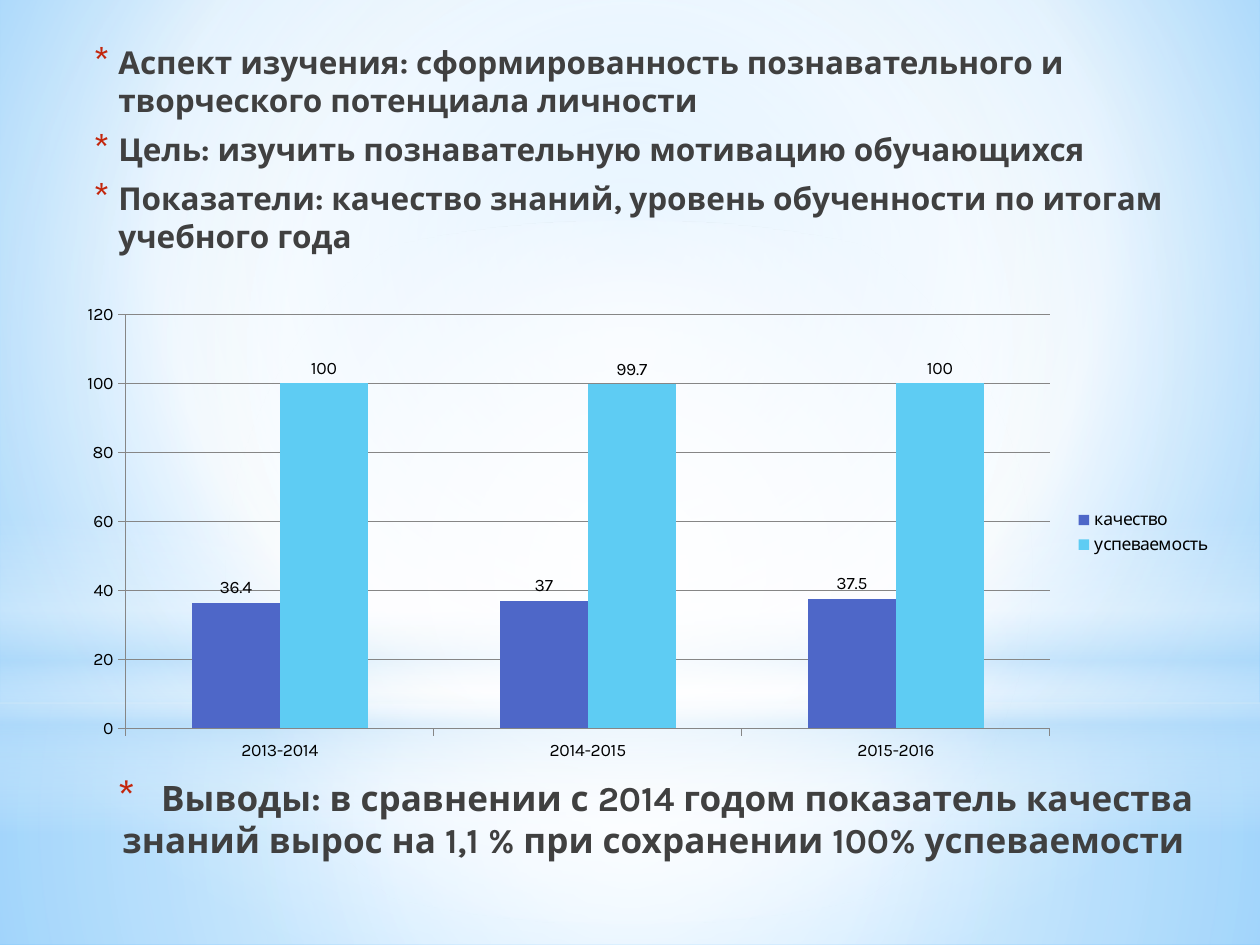
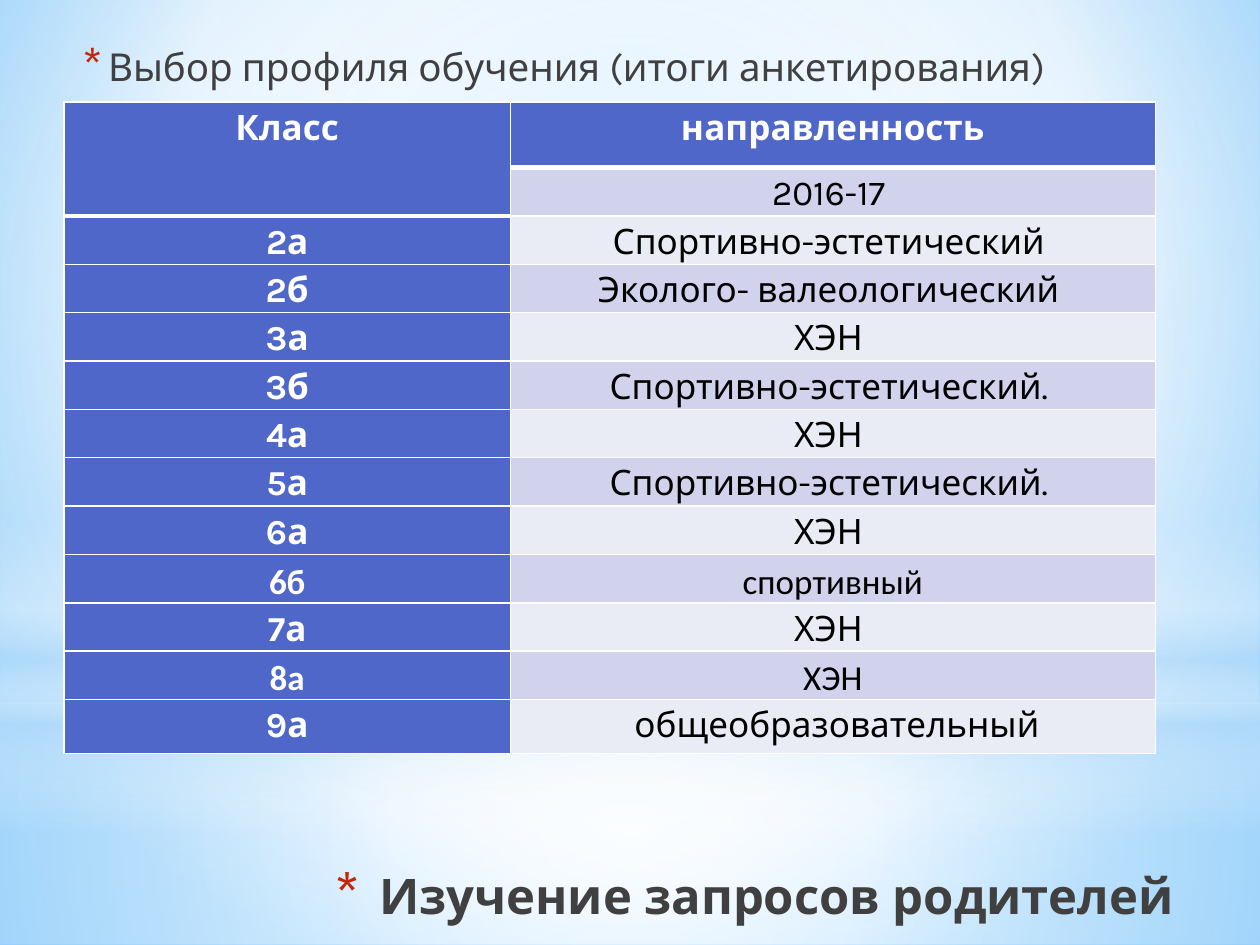
"""Builds two slides on study results and on parents' requests."""
from pptx import Presentation
from pptx.chart.data import CategoryChartData
from pptx.dml.color import RGBColor
from pptx.enum.chart import XL_CHART_TYPE as ChartType, XL_LABEL_POSITION as LabelPosition
from pptx.enum.chart import XL_LEGEND_POSITION as LegendPosition, XL_TICK_MARK as TickMark
from pptx.enum.shapes import MSO_SHAPE as Shape
from pptx.enum.text import MSO_ANCHOR as Anchor, PP_ALIGN as Align
from pptx.oxml import parse_xml
from pptx.oxml.ns import nsdecls, qn
from pptx.util import Inches, Pt

FONT, ALT_FONT = "Karla", "Calibri"
WHITE = RGBColor(0xFF, 0xFF, 0xFF)
BLACK = RGBColor(0, 0, 0)
DARK = RGBColor(0x40, 0x40, 0x40)
GREY = RGBColor(0x86, 0x86, 0x86)
RED = RGBColor(0xC3, 0x26, 0x0C)
INDIGO = RGBColor(0x4E, 0x67, 0xC8)
CYAN = RGBColor(0x5E, 0xCC, 0xF3)
PALE = RGBColor(0xB4, 0xDC, 0xFA)
SKY = RGBColor(0x9E, 0xD5, 0xFF)
DEEP_SKY = RGBColor(0x5B, 0xB9, 0xFF)
ROW_FILLS = (RGBColor(0xD0, 0xD3, 0xEB), RGBColor(0xE9, 0xEB, 0xF5))

CENTRE = (50, 50, 50, 50)
PAGE_STOPS = [(0, SKY, 100), (60, WHITE, 100), (100, DEEP_SKY, 100)]
PAGE_FOCUS = (20, 10, 20, 60)
BACKDROP = [
    (Shape.RECTANGLE, 5.58, 1.92, [(0, WHITE, 91), (37, WHITE, 76), (100, PALE, 79)], CENTRE),
    (Shape.RECTANGLE, 0, 5.58, [(0, WHITE, 89), (48, WHITE, 62), (100, PALE, 79)], CENTRE),
    (Shape.RECTANGLE, 4.12, 2.5, [(0, WHITE, 0), (29, WHITE, 30), (45, PALE, 40),
                                  (55, WHITE, 26), (65, PALE, 60), (100, WHITE, 0)], None),
    (Shape.OVAL, 1.75, 5.58, [(0, WHITE, 100), (56, WHITE, 0)], CENTRE),
]

STUDY_POINTS = [
    "Аспект изучения: сформированность познавательного и творческого потенциала личности",
    "Цель: изучить познавательную мотивацию обучающихся",
    "Показатели: качество знаний, уровень обученности по итогам учебного года",
]
CONCLUSION = ("Выводы: в сравнении с 2014 годом показатель качества знаний "
              "вырос на 1,1 % при сохранении 100% успеваемости ")
YEARS = ["2013-2014", "2014-2015", "2015-2016"]
RESULTS = [
    ("качество", (36.4, 37, 37.5), INDIGO),
    ("успеваемость", (100, 99.7, 100), CYAN),
]

SURVEY_POINTS = ["Выбор профиля обучения (итоги анкетирования)"]
SURVEY_TITLE = "Изучение запросов родителей"
PROFILES = [
    ("Класс", "направленность"),
    ("", "2016-17 "),
    ("2а", "Спортивно-эстетический "),
    ("2б", "Эколого- валеологический "),
    ("3а", "ХЭН "),
    ("3б", "Спортивно-эстетический. "),
    ("4а", "ХЭН "),
    ("5а", "Спортивно-эстетический. "),
    ("6а", "ХЭН "),
    ("6б", "спортивный"),
    ("7а", "ХЭН "),
    ("8а", "ХЭН"),
    ("9а", " общеобразовательный"),
]
ALT_FONT_CLASSES = ("6б", "8а")
COLUMN_WIDTHS = (3.54, 5.12)
ROW_HEIGHTS = [0.52] + [0.34] * (len(PROFILES) - 2) + [0.43]
THICK_BOTTOM_CELLS = ((0, 0), (0, 1), (1, 0))


def gradient(stops, focus):
    marks = "".join(
        f'<a:gs pos="{place * 1000}"><a:srgbClr val="{color}">'
        f'<a:alpha val="{opacity * 1000}"/></a:srgbClr></a:gs>'
        for place, color, opacity in stops)
    if focus:
        sides = " ".join(f'{side}="{share * 1000}"' for side, share in zip("ltrb", focus))
        course = f'<a:path path="circle"><a:fillToRect {sides}/></a:path>'
    else:
        course = '<a:lin ang="5400000" scaled="0"/>'
    return parse_xml(f'<a:gradFill {nsdecls("a")} rotWithShape="1">'
                     f'<a:gsLst>{marks}</a:gsLst>{course}</a:gradFill>')


def add_page(deck):
    page = deck.slides.add_slide(deck.slide_layouts[6])
    page.background.fill.background()
    holder = page.element.find(".//" + qn("p:bgPr"))
    holder.replace(holder.find(qn("a:noFill")), gradient(PAGE_STOPS, PAGE_FOCUS))
    for kind, top, height, stops, focus in BACKDROP:
        veil = page.shapes.add_shape(kind, 0, Inches(top), deck.slide_width, Inches(height))
        veil.shadow.inherit = False
        veil.line.fill.background()
        veil.fill.background()
        properties = veil.element.spPr
        properties.replace(properties.find(qn("a:noFill")), gradient(stops, focus))
    return page


def add_span(para, text, size, color, bold, font=FONT):
    span = para.add_run()
    span.text = text
    span.font.name = font
    span.font.size = Pt(size)
    span.font.bold = bold
    span.font.color.rgb = color


def set_bullet(para, margin, indent, percent, before):
    properties = para._p.get_or_add_pPr()
    properties.set("marL", str(Inches(margin)))
    properties.set("indent", str(Inches(indent)))
    for markup in (
        f'<a:spcBef {nsdecls("a")}><a:spcPct val="{before * 1000}"/></a:spcBef>',
        f'<a:buClr {nsdecls("a")}><a:srgbClr val="{RED}"/></a:buClr>',
        f'<a:buSzPct {nsdecls("a")} val="{percent * 1000}"/>',
        f'<a:buFont {nsdecls("a")} typeface="{FONT}"/>',
        f'<a:buChar {nsdecls("a")} char="*"/>',
    ):
        properties.append(parse_xml(markup))


def add_box(page, left, top, width, height):
    box = page.shapes.add_textbox(Inches(left), Inches(top), Inches(width), Inches(height))
    box.text_frame.word_wrap = True
    box.text_frame.vertical_anchor = Anchor.TOP
    return box.text_frame


def add_title(page, text, place, size):
    para = add_box(page, *place).paragraphs[0]
    set_bullet(para, 0.35, -0.35, 128, 0)
    para.alignment = Align.RIGHT
    add_span(para, text, size, DARK, True)


def add_points(page, points, place, size, bold):
    frame = add_box(page, *place)
    for number, text in enumerate(points):
        para = frame.add_paragraph() if number else frame.paragraphs[0]
        set_bullet(para, 0.25, -0.2, 130, 20)
        para.space_after = Pt(3)
        add_span(para, text, size, DARK, bold)


def add_results_chart(page):
    data = CategoryChartData()
    data.categories = YEARS
    for name, values, _ in RESULTS:
        data.add_series(name, values)
    chart = page.shapes.add_chart(ChartType.COLUMN_CLUSTERED, Inches(0.51), Inches(2.34),
                                  Inches(9.21), Inches(3.77), data).chart
    chart.has_title = False
    chart.font.name = FONT
    chart.font.size = Pt(10)
    chart.font.color.rgb = BLACK
    chart.has_legend = True
    chart.legend.position = LegendPosition.RIGHT
    chart.legend.include_in_layout = False
    for axis in (chart.category_axis, chart.value_axis):
        axis.major_tick_mark = TickMark.OUTSIDE
        axis.format.line.color.rgb = GREY
    chart.value_axis.minimum_scale = 0
    chart.value_axis.maximum_scale = 120
    chart.value_axis.major_unit = 20
    chart.value_axis.major_gridlines.format.line.color.rgb = GREY
    plot = chart.plots[0]
    plot.gap_width = 150
    plot.overlap = 0
    plot.vary_by_categories = False
    for series, (_, _, color) in zip(plot.series, RESULTS):
        series.format.fill.solid()
        series.format.fill.fore_color.rgb = color
        series.data_labels.show_value = True
        series.data_labels.position = LabelPosition.OUTSIDE_END


def set_borders(cell, bottom):
    properties = cell._tc.get_or_add_tcPr()
    for order, (side, width) in enumerate(zip("LRTB", (1, 1, 1, bottom))):
        properties.insert(order, parse_xml(
            f'<a:ln{side} {nsdecls("a")} w="{Pt(width)}"><a:solidFill>'
            f'<a:srgbClr val="{WHITE}"/></a:solidFill></a:ln{side}>'))


def add_profile_table(page):
    table = page.shapes.add_table(len(PROFILES), len(COLUMN_WIDTHS), Inches(0.51), Inches(0.81),
                                  Inches(sum(COLUMN_WIDTHS)), Inches(sum(ROW_HEIGHTS))).table
    for column, width in zip(table.columns, COLUMN_WIDTHS):
        column.width = Inches(width)
    for row, height in zip(table.rows, ROW_HEIGHTS):
        row.height = Inches(height)
    for row, texts in enumerate(PROFILES):
        font = ALT_FONT if texts[0] in ALT_FONT_CLASSES else FONT
        for column, text in enumerate(texts):
            heading = row == 0 or column == 0
            cell = table.cell(row, column)
            cell.margin_left = cell.margin_right = Inches(0.05)
            cell.margin_top = cell.margin_bottom = 0
            cell.fill.solid()
            cell.fill.fore_color.rgb = INDIGO if heading else ROW_FILLS[(row + 1) % 2]
            set_borders(cell, 3 if (row, column) in THICK_BOTTOM_CELLS else 1)
            if text:
                para = cell.text_frame.paragraphs[0]
                para.alignment = Align.CENTER
                para.line_spacing = 1.15
                add_span(para, text, 20, WHITE if heading else BLACK, heading, font)
    table.cell(0, 0).merge(table.cell(1, 0))


def main():
    deck = Presentation()
    deck.slide_width, deck.slide_height = Inches(10), Inches(7.5)

    study = add_page(deck)
    add_title(study, CONCLUSION, (0.51, 6.11, 9.06, 1.02), 20)
    add_points(study, STUDY_POINTS, (0.59, 0.29, 8.82, 1.57), 18, True)
    add_results_chart(study)

    survey = add_page(deck)
    add_title(survey, SURVEY_TITLE, (0.35, 6.82, 9.06, 0.39), 28)
    add_points(survey, SURVEY_POINTS, (0.51, 0.29, 8.9, 5.2), 22, False)
    add_profile_table(survey)

    deck.save("out.pptx")


if __name__ == "__main__":
    main()
